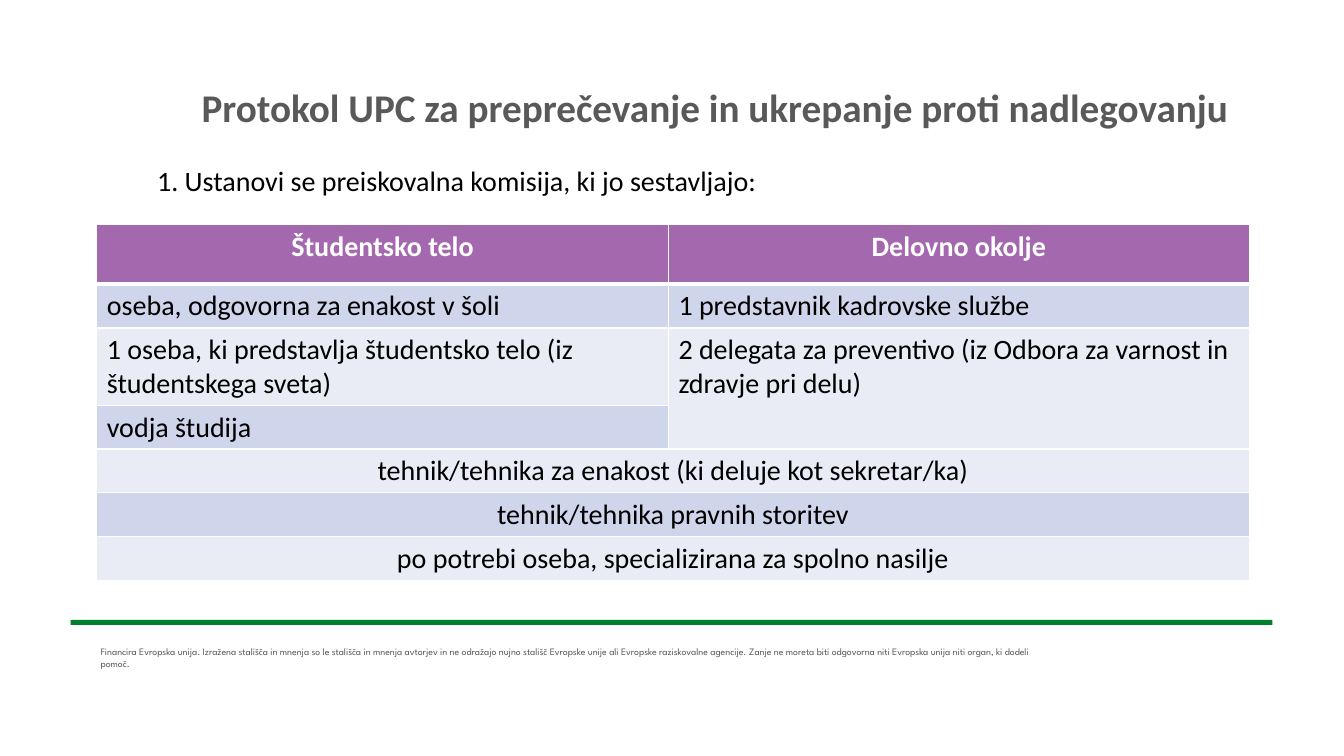
from lxml import etree
from pptx import Presentation
from pptx.dml.color import RGBColor
from pptx.enum.shapes import MSO_SHAPE as SHAPE
from pptx.enum.text import MSO_ANCHOR as ANCHOR, MSO_AUTO_SIZE as AUTO, PP_ALIGN as AL
from pptx.oxml.ns import qn
from pptx.util import Inches, Pt

GREY, PURPLE, GREEN, WHITE, BLACK = "595959", "A468AE", "007F2D", "FFFFFF", "000000"
BANDS = ["CFD5EA", "E9EBF5"]
HEADERS = ["Študentsko telo", "Delovno okolje"]
MEMBERS = [
    ["oseba, odgovorna za enakost v šoli", "1 predstavnik kadrovske službe"],
    ["1 oseba, ki predstavlja študentsko telo (iz študentskega sveta)",
     "2 delegata za preventivo (iz Odbora za varnost in zdravje pri delu)"],
    ["vodja študija"],
    ["tehnik/tehnika za enakost (ki deluje kot sekretar/ka)"],
    ["tehnik/tehnika pravnih storitev"],
    ["po potrebi oseba, specializirana za spolno nasilje"],
]
FIRST_SHARED_ROW = 4
DISCLAIMER = (
    "Financira Evropska unija. Izražena stališča in mnenja so le stališča in mnenja "
    "avtorjev in ne odražajo nujno stališč Evropske unije ali Evropske raziskovalne "
    "agencije. Zanje ne moreta biti odgovorna niti Evropska unija niti organ, ki dodeli pomoč."
)


def rgb(value):
    return RGBColor.from_string(value)


def box(values):
    return [Inches(v) for v in values]


def write(tf, text, size=20, color=BLACK, bold=False, font="Calibri",
          align=AL.LEFT, indent=0):
    tf.word_wrap = True
    tf.vertical_anchor = ANCHOR.TOP
    p = tf.paragraphs[0]
    p.alignment = align
    if indent:
        p.level = 1
        p._p.get_or_add_pPr().set("marL", str(Inches(indent)))
    r = p.add_run()
    r.text = text
    r.font.size = Pt(size)
    r.font.name = font
    r.font.bold = bold
    r.font.color.rgb = rgb(color)


def add_title(slide, text, at):
    sp = slide.shapes.title
    sp.left, sp.top, sp.width, sp.height = box(at)
    write(sp.text_frame, text, size=28, color=GREY, bold=True)
    sp.text_frame.auto_size = AUTO.NONE


def add_rect(slide, at, fill):
    sp = slide.shapes.add_shape(SHAPE.RECTANGLE, *box(at))
    sp.shadow.inherit = False
    sp.fill.solid()
    sp.fill.fore_color.rgb = rgb(fill)
    sp.line.fill.background()
    return sp


def set_borders(cell, **widths):
    tcPr = cell._tc.get_or_add_tcPr()
    for i, side in enumerate(["L", "R", "T", "B"]):
        ln = etree.Element(qn(f"a:ln{side}"), w=str(Pt(widths.get(side, 1))))
        fill = etree.SubElement(ln, qn("a:solidFill"))
        etree.SubElement(fill, qn("a:srgbClr"), val=WHITE)
        tcPr.insert(i, ln)


def style_cell(cell, fill, **widths):
    cell.fill.solid()
    cell.fill.fore_color.rgb = rgb(fill)
    set_borders(cell, **widths)


def add_committee_table(slide):
    rows = [HEADERS] + MEMBERS
    frame = slide.shapes.add_table(len(rows), 2, *box([0.96, 2.23, 11.43, 3.53]))
    table = frame.table
    for col, width in zip(table.columns, [5.67, 5.76]):
        col.width = Inches(width)
    for i, texts in enumerate(rows):
        header, shared = i == 0, i >= FIRST_SHARED_ROW
        table.rows[i].height = Inches(0.59 if header else 0.41)
        for cell in table.rows[i].cells:
            if header:
                style_cell(cell, PURPLE, B=3)
            else:
                style_cell(cell, BANDS[(i - 1) % 2], T=3 if i == 1 else 1)
        if shared:
            table.cell(i, 0).merge(table.cell(i, 1))
        for j, text in enumerate(texts):
            write(table.cell(i, j).text_frame, text, bold=header,
                  color=WHITE if header else BLACK,
                  align=AL.CENTER if header or shared else AL.LEFT)
    table.cell(2, 1).merge(table.cell(3, 1))
    frame.height = Inches(3.53)


def main():
    prs = Presentation()
    prs.slide_width, prs.slide_height = box([13.33, 7.5])
    slide = prs.slides.add_slide(prs.slide_layouts[5])

    footer = slide.shapes.add_textbox(*box([0.9, 6.36, 9.66, 0.43]))
    write(footer.text_frame, DISCLAIMER, size=7, color=GREY, font="League Spartan")
    add_rect(slide, [0.7, 6.15, 11.92, 0.05], GREEN)
    intro = add_rect(slide, [0.96, 1.57, 11.43, 3.8], WHITE)
    write(intro.text_frame, "1. Ustanovi se preiskovalna komisija, ki jo sestavljajo:",
          indent=0.5)
    add_committee_table(slide)
    add_title(slide, "Protokol UPC za preprečevanje in ukrepanje proti nadlegovanju",
              [1.9, 0.78, 10.73, 0.57])
    prs.save("out.pptx")


if __name__ == "__main__":
    main()
